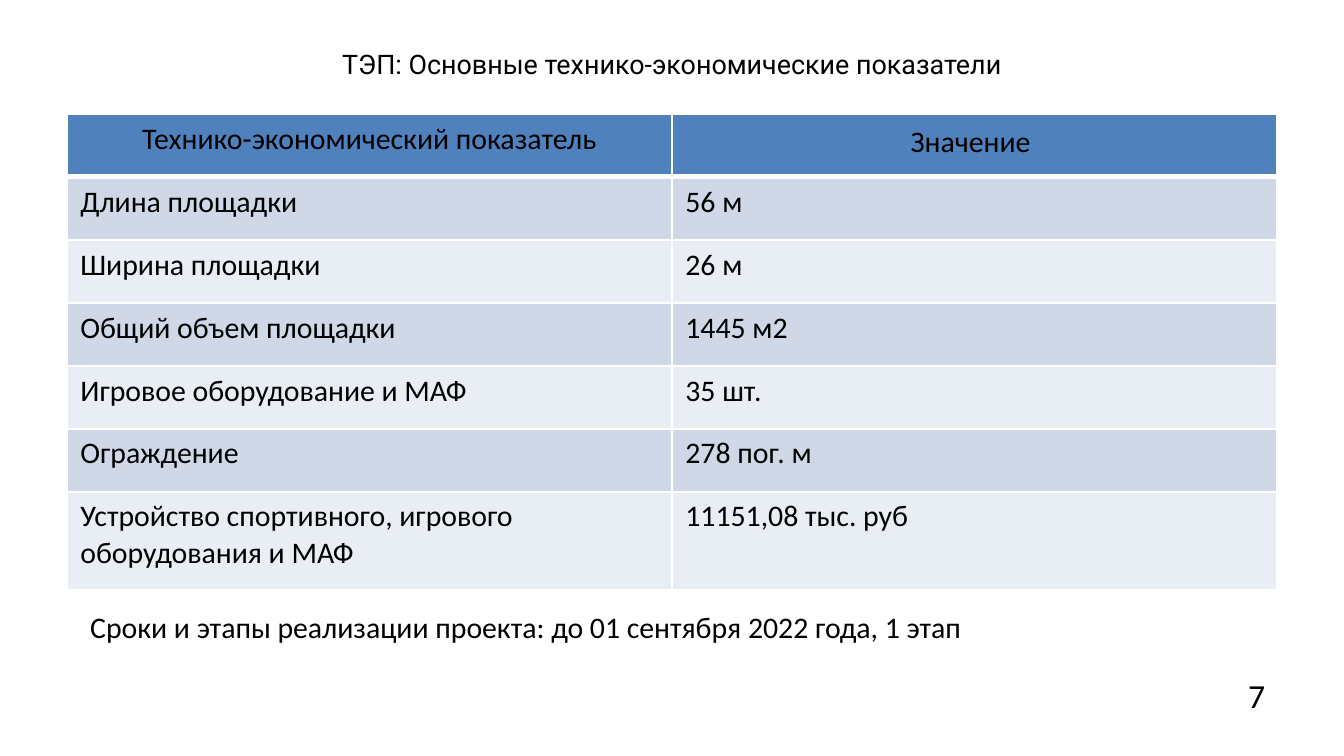
from lxml.etree import SubElement
from pptx import Presentation
from pptx.dml.color import RGBColor
from pptx.enum.text import MSO_ANCHOR, PP_ALIGN
from pptx.oxml.ns import qn
from pptx.util import Emu, Pt

PX = 914400 / 134.4
SLIDE_SIZE = (1344, 756)
BLACK, WHITE = "000000", "FFFFFF"
HEADER_FILL, BAND_FILLS = "4F81BD", ("D0D8E8", "E9EDF4")

# text, (left, top, width, height), font, size, alignment, top inset
TEXTS = [
    ("ТЭП: Основные технико-экономические показатели",
     (67, 43, 1210, 71), "Roboto", 14.4, PP_ALIGN.CENTER, 5),
    ("Сроки и этапы реализации проекта: до 01 сентября 2022 года, 1 этап",
     (77, 602, 1107, 50), "Calibri", 16, PP_ALIGN.LEFT, 7),
    ("7", (1235, 668, 81, 54), "Calibri", 18, PP_ALIGN.LEFT, 7),
]

TABLE_LEFT, TABLE_TOP, TABLE_WIDTH = 67, 114, 1210
ROW_HEIGHT, LAST_ROW_HEIGHT = 63, 98
ROWS = [
    ("Технико-экономический показатель", "Значение"),
    ("Длина площадки", "56 м"),
    ("Ширина площадки", "26 м"),
    ("Общий объем площадки", "1445 м2"),
    ("Игровое оборудование и МАФ", "35 шт."),
    ("Ограждение", "278 пог. м"),
    ("Устройство спортивного, игрового оборудования и МАФ", "11151,08 тыс. руб"),
]


def px(length):
    return Emu(round(length * PX))


def color(value):
    return RGBColor.from_string(value)


def add_span(para, text, font="Calibri", size=16):
    span = para.add_run()
    span.text = text
    span.font.name = font
    span.font.size = Pt(size)
    span.font.bold = False
    span.font.color.rgb = color(BLACK)


def add_text(page, text, place, font, size, align, top_inset):
    box = page.shapes.add_textbox(*map(px, place))
    frame = box.text_frame
    frame.word_wrap = True
    frame.vertical_anchor = MSO_ANCHOR.TOP
    frame.margin_top = px(top_inset)
    para = frame.paragraphs[0]
    para.alignment = align
    add_span(para, text, font, size)


def set_borders(cell, top, bottom):
    """Draw white borders; top and bottom are widths in points."""
    properties = cell._tc.get_or_add_tcPr()
    for side, width in (("L", 1), ("R", 1), ("T", top), ("B", bottom)):
        line = SubElement(properties, qn(f"a:ln{side}"), w=str(Pt(width)))
        fill = SubElement(line, qn("a:solidFill"))
        SubElement(fill, qn("a:srgbClr"), val=WHITE)


def add_indicators(page):
    heights = [ROW_HEIGHT] * (len(ROWS) - 1) + [LAST_ROW_HEIGHT]
    table = page.shapes.add_table(
        len(ROWS), 2, px(TABLE_LEFT), px(TABLE_TOP),
        px(TABLE_WIDTH), px(sum(heights))).table
    for row, values in enumerate(ROWS):
        table.rows[row].height = px(heights[row])
        is_header = row == 0
        for column, text in enumerate(values):
            cell = table.cell(row, column)
            set_borders(cell, top=3 if row == 1 else 1, bottom=3 if is_header else 1)
            cell.fill.solid()
            cell.fill.fore_color.rgb = color(
                HEADER_FILL if is_header else BAND_FILLS[(row - 1) % 2])
            para = cell.text_frame.paragraphs[0]
            para.alignment = PP_ALIGN.CENTER if is_header else PP_ALIGN.LEFT
            add_span(para, text)
    add_span(table.cell(0, 1).text_frame.paragraphs[0], " ", size=18)


def main():
    deck = Presentation()
    deck.slide_width, deck.slide_height = map(px, SLIDE_SIZE)
    page = deck.slides.add_slide(deck.slide_layouts[6])
    add_indicators(page)
    for item in TEXTS:
        add_text(page, *item)
    deck.save("out.pptx")


if __name__ == "__main__":
    main()
